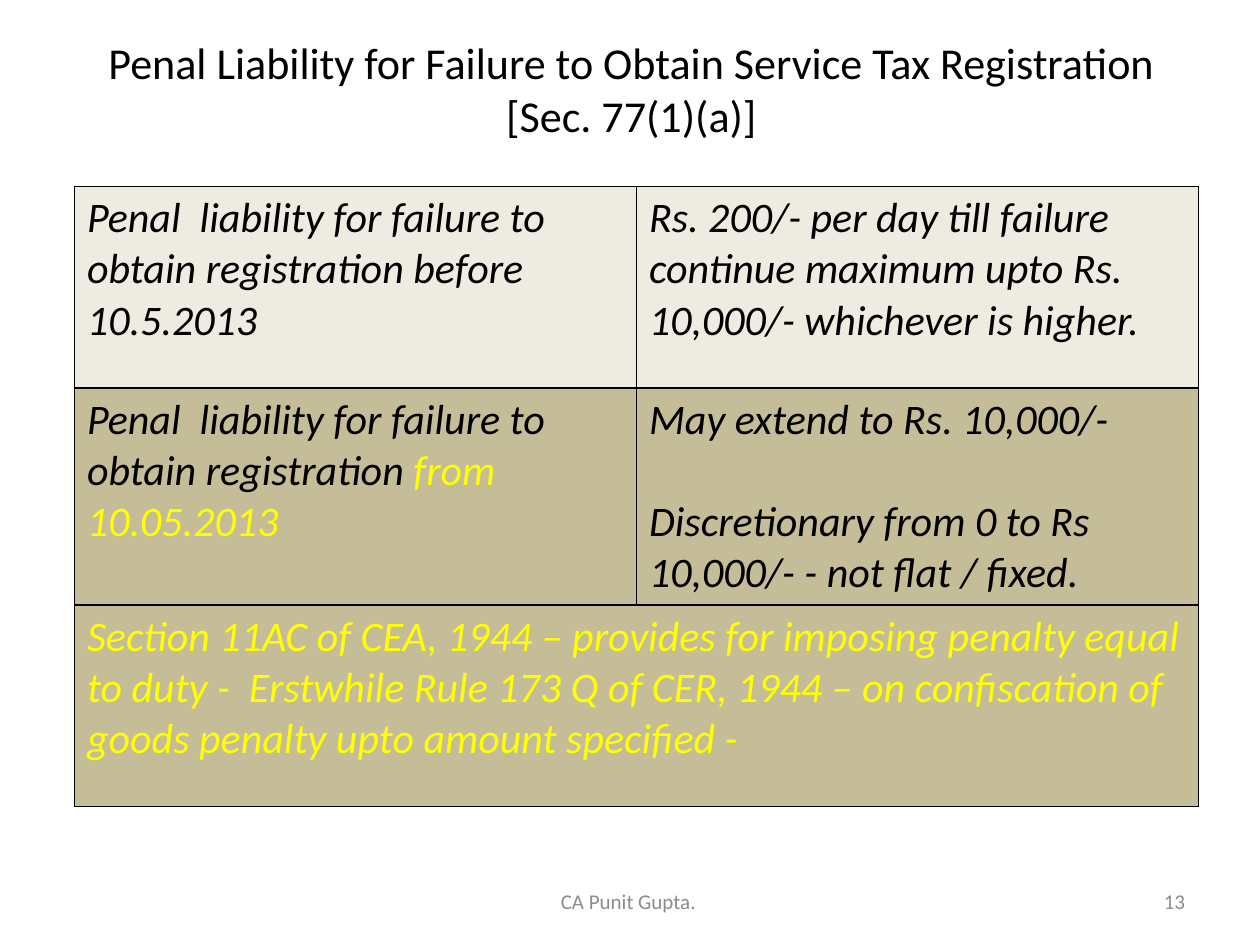
"""Build a slide on penal liability for failing to register for service tax."""
from lxml import etree
from pptx import Presentation
from pptx.dml.color import RGBColor
from pptx.enum import text as t
from pptx.oxml import ns
from pptx.util import Cm, Pt

BLACK = RGBColor(0x00, 0x00, 0x00)
YELLOW = RGBColor(0xFF, 0xFF, 0x00)
GREY = RGBColor(0x8C, 0x8C, 0x8C)
CREAM = RGBColor(0xEE, 0xEC, 0xE1)
TAN = RGBColor(0xC4, 0xBD, 0x97)
FONT = "Calibri"

LABELS = [
    ("Penal Liability for Failure to Obtain Service Tax Registration [Sec. 77(1)(a)]",
     (1.3, 0.58, 22.86, 2.41), 25.2, BLACK, t.PP_ALIGN.CENTER),
    ("CA Punit Gupta. ", (8.69, 17.65, 8.05, 1.02), 12, GREY, t.PP_ALIGN.CENTER),
    ("13", (18.21, 17.65, 5.93, 1.02), 12, GREY, t.PP_ALIGN.RIGHT),
]

ROWS = [
    (4.06, CREAM, [
        [[("Penal  liability for failure to obtain registration before 10.5.2013", BLACK)]],
        [[("Rs. 200/- per day till failure continue maximum upto Rs. "
           "10,000/- whichever is higher.", BLACK)]],
    ]),
    (4.38, TAN, [
        [[("Penal  liability for failure to obtain registration ", BLACK),
          ("from 10.05.2013", YELLOW)]],
        [[("May extend to Rs. 10,000/-", BLACK)],
         [("Discretionary from 0 to Rs 10,000/- - not flat / fixed.", BLACK)]],
    ]),
    (4.06, TAN, [
        [[("Section 11AC of CEA, 1944 – provides for imposing penalty equal to duty -  "
           "Erstwhile Rule 173 Q of CER, 1944 – on confiscation of goods penalty "
           "upto amount specified -", YELLOW)]],
    ]),
]
LEFT, TOP, WIDTH, COLS = 1.5, 3.76, 22.66, 2
GAP = Pt(29)


def style(run, size, color, slant=False):
    font = run.font
    font.name, font.size, font.italic = FONT, Pt(size), slant
    font.color.rgb = color


def label(slide, words, box, size, color, align):
    frame = slide.shapes.add_textbox(*map(Cm, box)).text_frame
    frame.word_wrap = True
    frame.vertical_anchor = t.MSO_ANCHOR.MIDDLE
    frame.text = words
    para = frame.paragraphs[0]
    para.alignment = align
    style(para.runs[0], size, color)


def border(cell):
    props = cell._tc.get_or_add_tcPr()
    for side in ("lnL", "lnR", "lnT", "lnB"):
        line = etree.SubElement(props, ns.qn("a:" + side), w=str(Pt(1)))
        fill = etree.SubElement(line, ns.qn("a:solidFill"))
        etree.SubElement(fill, ns.qn("a:srgbClr"), val=str(BLACK))


def write(cell, paras):
    frame = cell.text_frame
    for i, parts in enumerate(paras):
        para = frame.add_paragraph() if i else frame.paragraphs[0]
        if i:
            para.space_before = GAP
        for words, color in parts:
            run = para.add_run()
            run.text = words
            style(run, 24, color, True)


def grid(slide):
    high = sum(row[0] for row in ROWS)
    table = slide.shapes.add_table(
        len(ROWS), COLS, Cm(LEFT), Cm(TOP), Cm(WIDTH), Cm(high)).table
    table.first_row = table.horz_banding = False
    for r, (tall, fill, cells) in enumerate(ROWS):
        table.rows[r].height = Cm(tall)
        if len(cells) < COLS:
            table.cell(r, 0).merge(table.cell(r, COLS - 1))
        for c in range(COLS):
            cell = table.cell(r, c)
            border(cell)
            cell.fill.solid()
            cell.fill.fore_color.rgb = fill
        for c, paras in enumerate(cells):
            write(table.cell(r, c), paras)


def main():
    deck = Presentation()
    deck.slide_width, deck.slide_height = Cm(25.4), Cm(19.05)
    slide = deck.slides.add_slide(deck.slide_layouts[6])
    for item in LABELS:
        label(slide, *item)
    grid(slide)
    deck.save("out.pptx")


if __name__ == "__main__":
    main()
